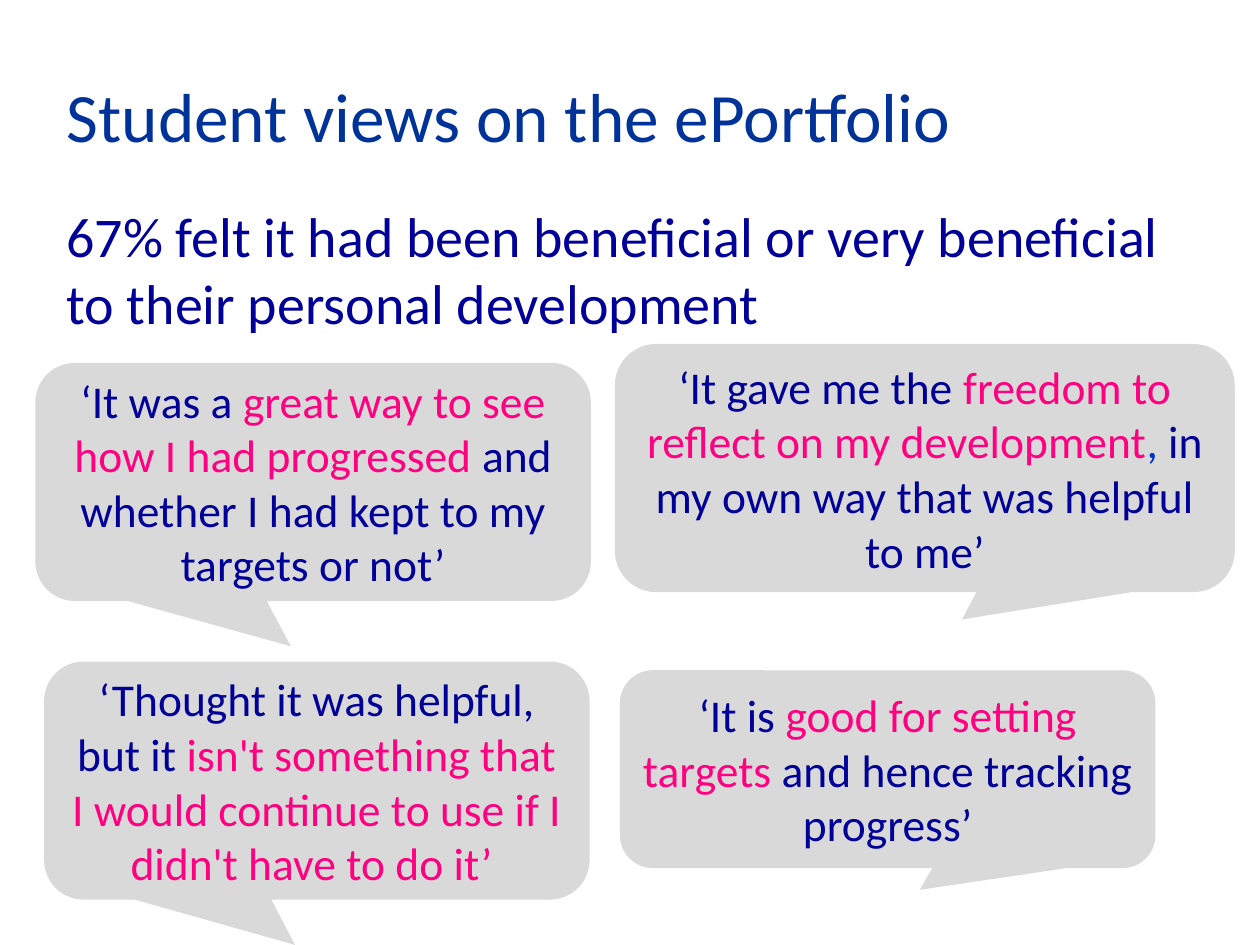
from dataclasses import dataclass

import pptx
import pptx.dml.color
import pptx.enum.shapes
import pptx.enum.text
import pptx.util

COLUMNS, ROWS = 100, 75
CELL = pptx.util.Inches(0.1)


@dataclass(frozen=True)
class Theme:
    font: str = "Calibri"
    title: str = "003399"
    text: str = "000099"
    highlight: str = "FF0080"
    comma: str = "0033CC"
    bubble: str = "D9D9D9"
    title_size: float = 39.6
    body_size: float = 32
    quote_size: float = 26


@dataclass(frozen=True)
class Area:
    col: float
    row: float
    cols: float
    rows: float

    def emu(self) -> tuple[int, ...]:
        return tuple(round(n * CELL) for n in (self.col, self.row, self.cols, self.rows))


@dataclass(frozen=True)
class Quote:
    area: Area
    tail: tuple[float, float]
    phrases: tuple[tuple[str, str], ...]


THEME = Theme()
TAIL_LEFT = (-0.04, 0.69)
TAIL_RIGHT = (0.06, 0.61)
TITLE_AREA = Area(4.3, 5.2, 90, 7.8)
BODY_AREA = Area(4.3, 15.5, 90, 12.6)

QUOTES = (
    Quote(Area(2.8, 28.8, 44.1, 18.9), TAIL_LEFT, (
        ("‘It was a ", THEME.text),
        ("great way to see how I had progressed ", THEME.highlight),
        ("and whether I had kept to my targets or not’", THEME.text))),
    Quote(Area(48.8, 27.3, 49.2, 19.7), TAIL_RIGHT, (
        ("‘It gave me the ", THEME.text),
        ("freedom to reflect on my development", THEME.highlight),
        (", ", THEME.comma),
        ("in my own way that was helpful to me’", THEME.text))),
    Quote(Area(49.2, 53.2, 42.5, 15.7), TAIL_RIGHT, (
        ("‘It is ", THEME.text),
        ("good for setting targets ", THEME.highlight),
        ("and hence tracking progress’", THEME.text))),
    Quote(Area(3.5, 52.5, 43.3, 18.9), TAIL_LEFT, (
        ("‘Thought it was helpful, but it ", THEME.text),
        ("isn't something that I would continue to use if I didn't have to do it’ ",
         THEME.highlight))),
)


def rgb(color: str) -> pptx.dml.color.RGBColor:
    return pptx.dml.color.RGBColor.from_string(color)


def format_run(r, size: float, color: str) -> None:
    r.font.name = THEME.font
    r.font.size = pptx.util.Pt(size)
    r.font.color.rgb = rgb(color)


def fill_text(sp, text: str, size: float, color: str,
              anchor: pptx.enum.text.MSO_ANCHOR) -> None:
    tf = sp.text_frame
    tf.text = text
    tf.word_wrap = True
    tf.auto_size = pptx.enum.text.MSO_AUTO_SIZE.NONE
    tf.vertical_anchor = anchor
    p = tf.paragraphs[0]
    p.alignment = pptx.enum.text.PP_ALIGN.LEFT
    format_run(p.runs[0], size, color)


def add_quote(s, quote: Quote) -> None:
    sp = s.shapes.add_shape(
        pptx.enum.shapes.MSO_SHAPE.ROUNDED_RECTANGULAR_CALLOUT, *quote.area.emu())
    sp.adjustments[0], sp.adjustments[1] = quote.tail
    sp.shadow.inherit = False
    sp.fill.solid()
    sp.fill.fore_color.rgb = rgb(THEME.bubble)
    sp.line.fill.background()
    tf = sp.text_frame
    tf.word_wrap = True
    tf.vertical_anchor = pptx.enum.text.MSO_ANCHOR.MIDDLE
    p = tf.paragraphs[0]
    p.alignment = pptx.enum.text.PP_ALIGN.CENTER
    for text, color in quote.phrases:
        r = p.add_run()
        r.text = text
        format_run(r, THEME.quote_size, color)


def main() -> None:
    prs = pptx.Presentation()
    prs.slide_width, prs.slide_height = COLUMNS * CELL, ROWS * CELL
    s = prs.slides.add_slide(prs.slide_layouts[5])

    title = s.shapes.title
    title.left, title.top, title.width, title.height = TITLE_AREA.emu()
    fill_text(title, "Student views on the ePortfolio", THEME.title_size,
              THEME.title, pptx.enum.text.MSO_ANCHOR.MIDDLE)

    body = s.shapes.add_textbox(*BODY_AREA.emu())
    fill_text(body, "67% felt it had been beneficial or very beneficial "
              "to their personal development", THEME.body_size,
              THEME.text, pptx.enum.text.MSO_ANCHOR.TOP)

    for quote in QUOTES:
        add_quote(s, quote)
    prs.save("out.pptx")


if __name__ == "__main__":
    main()
